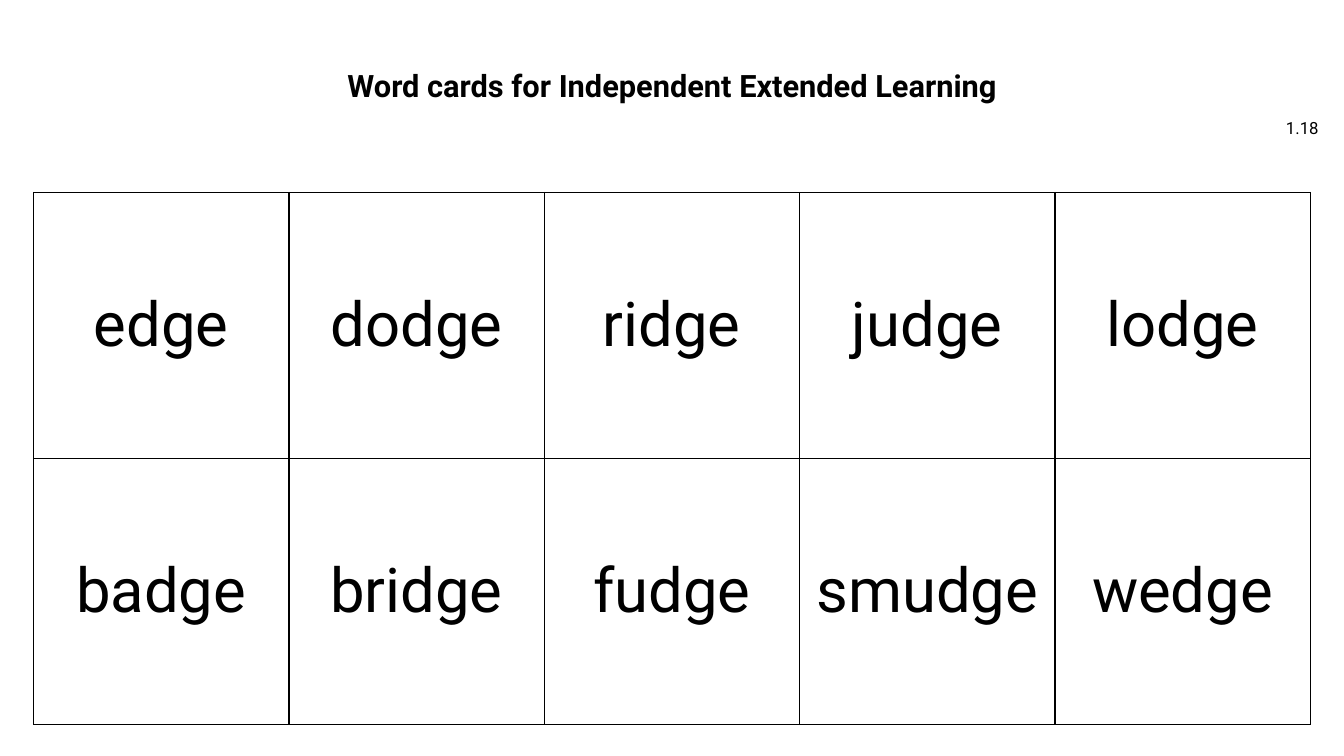
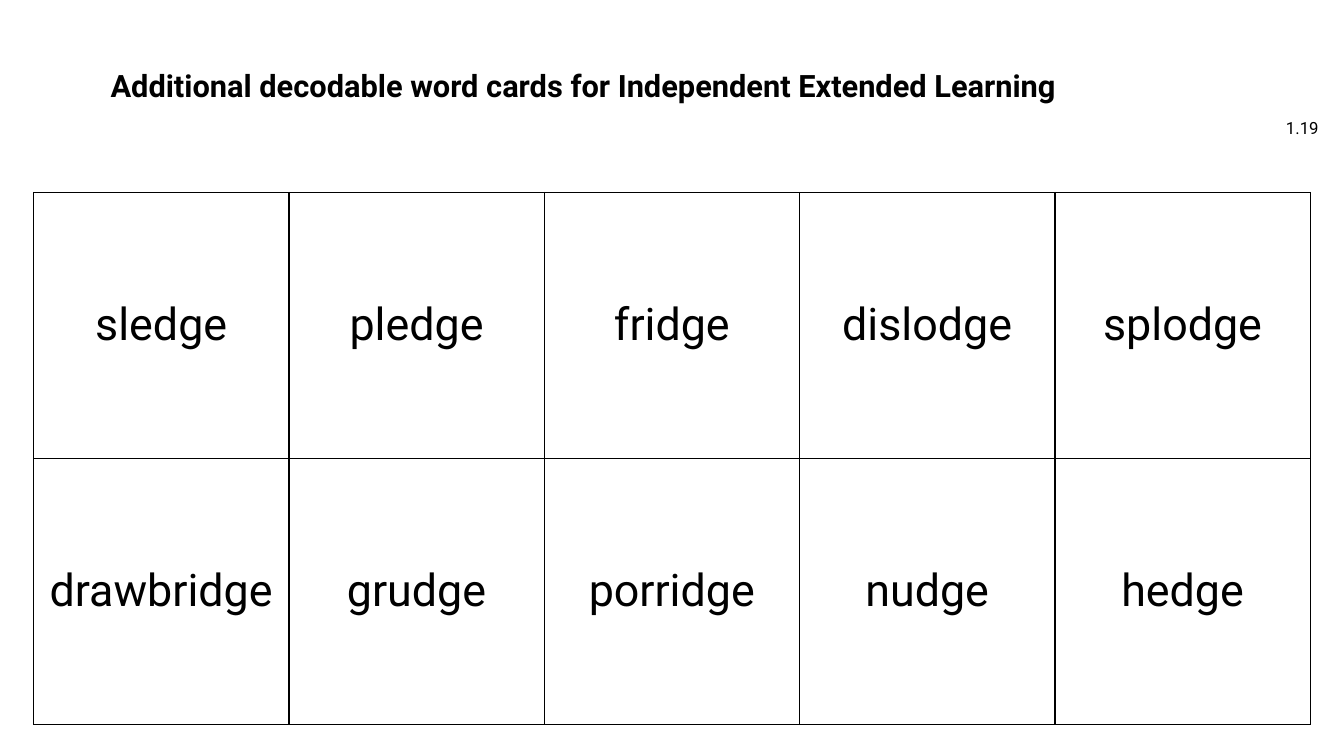
"""Build two slides of phonics word cards."""
import pptx
import pptx.dml.color
import pptx.enum.text
import pptx.oxml
import pptx.oxml.ns
import pptx.util

Pt = pptx.util.Pt
ALIGN = pptx.enum.text.PP_ALIGN
ANCHOR = pptx.enum.text.MSO_ANCHOR

BLACK = pptx.dml.color.RGBColor(0x00, 0x00, 0x00)
WHITE = pptx.dml.color.RGBColor(0xFF, 0xFF, 0xFF)
FONT = "Roboto"
BORDER_WIDTH = Pt(1)
BORDER_SIDES = ("lnL", "lnR", "lnT", "lnB")

DECK = [
    {
        "title": "Word cards for Independent Extended Learning",
        "title_left": 166.5,
        "title_width": 627,
        "number": "1.18",
        "word_size": 44,
        "words": [
            ["edge", "dodge", "ridge", "judge", "lodge"],
            ["badge", "bridge", "fudge", "smudge", "wedge"],
        ],
    },
    {
        "title": "Additional decodable word cards for Independent Extended Learning",
        "title_left": 46,
        "title_width": 741,
        "number": "1.19",
        "word_size": 32,
        "words": [
            ["sledge", "pledge", "fridge", "dislodge", "splodge"],
            ["drawbridge", "grudge", "porridge", "nudge", "hedge"],
        ],
    },
]


def write_text(frame, text, size, align=ALIGN.CENTER, bold=False, spacing=None):
    """Put one formatted paragraph into a text frame."""
    paragraph = frame.paragraphs[0]
    paragraph.alignment = align
    if spacing:
        paragraph.line_spacing = spacing
    run = paragraph.add_run()
    run.text = text
    run.font.name = FONT
    run.font.size = Pt(size)
    run.font.bold = bold
    run.font.color.rgb = BLACK


def draw_borders(cell):
    """Give a table cell a solid line on every side."""
    properties = cell._tc.get_or_add_tcPr()
    namespace = pptx.oxml.ns.nsdecls("a")
    for position, side in enumerate(BORDER_SIDES):
        border = pptx.oxml.parse_xml(
            f'<a:{side} {namespace} w="{BORDER_WIDTH}"><a:solidFill>'
            f'<a:srgbClr val="{BLACK}"/></a:solidFill></a:{side}>'
        )
        properties.insert(position, border)


class CardDeck:
    """Hold the presentation, its style and the current slide."""

    def __init__(self):
        """Start an empty widescreen presentation."""
        self.presentation = pptx.Presentation()
        self.presentation.slide_width = Pt(960)
        self.presentation.slide_height = Pt(540)
        self.slide = None

    def new_slide(self):
        """Add a blank slide with a white background."""
        self.slide = self.presentation.slides.add_slide(
            self.presentation.slide_layouts[6]
        )
        background = self.slide.background.fill
        background.solid()
        background.fore_color.rgb = WHITE

    def text_box(self, left, top, width, height, anchor):
        """Add a wrapping text box and return its text frame."""
        frame = self.slide.shapes.add_textbox(
            Pt(left), Pt(top), Pt(width), Pt(height)
        ).text_frame
        frame.word_wrap = True
        frame.vertical_anchor = anchor
        return frame

    def title(self, text, left, width):
        """Add the bold centred heading."""
        heading = self.text_box(left, 46, width, 25, ANCHOR.TOP)
        heading.margin_top = Pt(5)
        write_text(heading, text, 22, bold=True, spacing=0.9)

    def number(self, text):
        """Add the card sheet number at the right edge."""
        sheet_number = self.text_box(903.5, 77, 45.5, 29, ANCHOR.MIDDLE)
        write_text(sheet_number, text, 12, align=ALIGN.RIGHT)

    def word_cards(self, words, size):
        """Add the table of word cards, one word per cell."""
        width, height = 912, 380
        cards = self.slide.shapes.add_table(
            len(words), len(words[0]), Pt(24), Pt(137.5), Pt(width), Pt(height)
        ).table
        cards.first_row = False
        cards.horz_banding = False
        for column in cards.columns:
            column.width = Pt(width / len(words[0]))
        for row, row_words in zip(cards.rows, words):
            row.height = Pt(height / len(words))
            for card, word in zip(row.cells, row_words):
                card.fill.background()
                card.vertical_anchor = ANCHOR.MIDDLE
                draw_borders(card)
                write_text(card.text_frame, word, size)


def main():
    """Build every sheet and save the deck."""
    deck = CardDeck()
    for sheet in DECK:
        deck.new_slide()
        deck.number(sheet["number"])
        deck.title(sheet["title"], sheet["title_left"], sheet["title_width"])
        deck.word_cards(sheet["words"], sheet["word_size"])
    deck.presentation.save("out.pptx")


if __name__ == "__main__":
    main()
